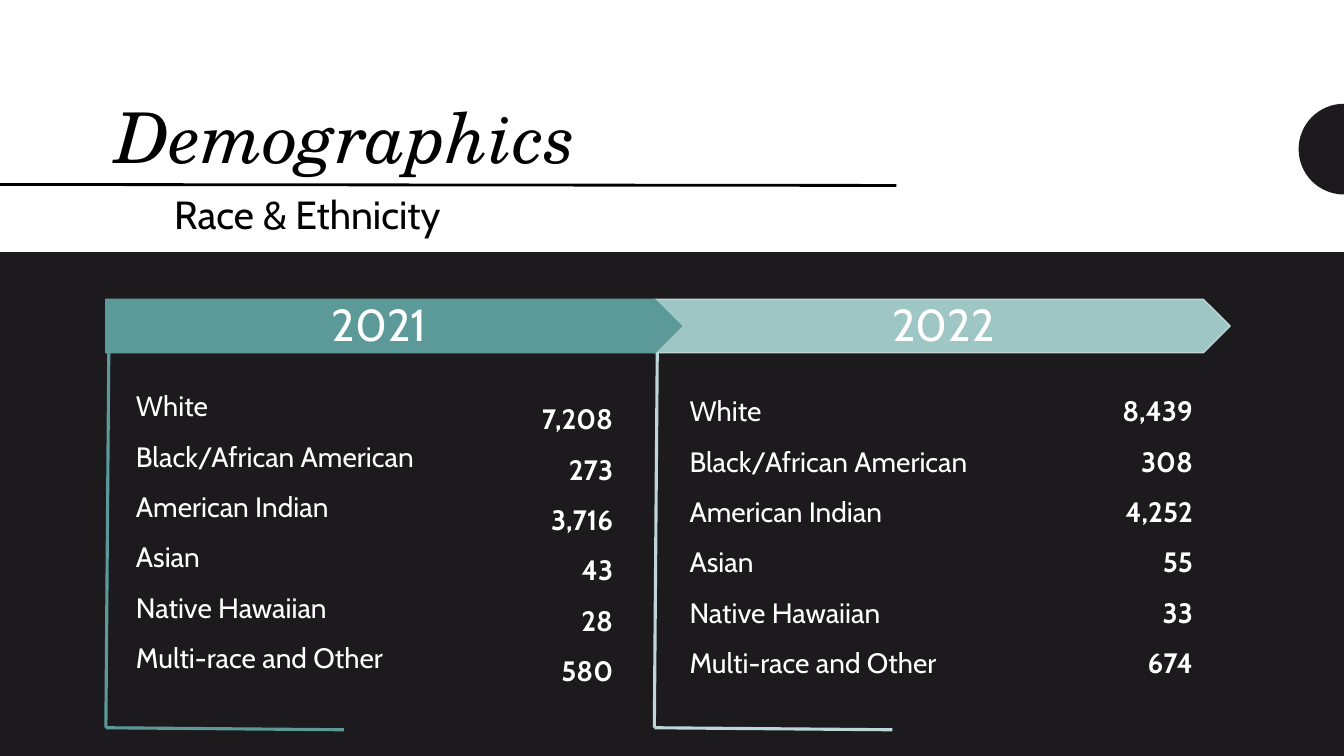
from dataclasses import dataclass
from math import cos, pi, sin

from lxml.etree import SubElement
from pptx import Presentation
from pptx.dml.color import RGBColor as RGB
from pptx.enum.shapes import MSO_CONNECTOR as CONN, MSO_SHAPE as SHAPE
from pptx.enum.text import MSO_ANCHOR as ANCHOR, PP_ALIGN as ALIGN
from pptx.oxml.ns import qn
from pptx.util import Pt

PX = 9144  # 100 px to the inch
WIDTH, HEIGHT = 1333, 750


@dataclass(frozen=True)
class Theme:
    dark: RGB = RGB.from_string("1D1A1D")
    white: RGB = RGB.from_string("FFFFFF")
    black: RGB = RGB.from_string("000000")
    teal: RGB = RGB.from_string("5C9A99")
    mist: RGB = RGB.from_string("9EC6C4")
    pale: RGB = RGB.from_string("BBD7D6")
    serif: str = "TeX Gyre Schola"
    sans: str = "Cabin"
    title: int = 50
    subtitle: int = 28
    year: int = 32
    body: int = 20


@dataclass(frozen=True)
class Panel:
    year: str
    counts: list
    fill: RGB
    line: RGB
    # Text boxes as (left, top, width, height) from the panel's corner
    year_box: tuple
    label_box: tuple
    count_box: tuple


T = Theme()
GROUPS = ["White", "Black/African American", "American Indian", "Asian",
          "Native Hawaiian", "Multi-race and Other"]
PANELS = [
    Panel("2021", ["7,208", "273", "3,716", "43", "28", "580"], T.teal, T.teal,
          (214, -8, 128, 64), (20, 67, 356, 313), (290, 80, 223, 313)),
    Panel("2022", ["8,439", "308", "4,252", "55", "33", "674"], T.mist, T.pale,
          (226, -8, 128, 64), (25, 72, 329, 313), (322, 72, 222, 313)),
]


def emu(*lengths):
    return [n * PX for n in lengths]


def add_text(slide, box, lines, size, color, font=T.sans, bold=False, italic=False,
             align=ALIGN.LEFT, spacing=1.0, anchor=ANCHOR.TOP):
    tf = slide.shapes.add_textbox(*emu(*box)).text_frame
    tf.word_wrap = True
    tf.vertical_anchor = anchor
    for i, line in enumerate(lines):
        p = tf.add_paragraph() if i else tf.paragraphs[0]
        p.text = line
        p.alignment = align
        p.line_spacing = spacing
        p.font.name, p.font.size, p.font.color.rgb = font, Pt(size), color
        p.font.bold, p.font.italic = bold, italic


def add_line(slide, ends, color, weight):
    c = slide.shapes.add_connector(CONN.STRAIGHT, *emu(*ends))
    c.line.color.rgb, c.line.width = color, Pt(weight)
    SubElement(c._element.spPr, qn("a:effectLst"))


def paint(sp, fill, line=None):
    sp.shadow.inherit = False
    sp.fill.solid()
    sp.fill.fore_color.rgb = fill
    if line is None:
        sp.line.fill.background()
    else:
        sp.line.color.rgb, sp.line.width = line, Pt(1)


def add_half_disc(slide, right, middle, radius):
    steps = 32
    angles = [pi * i / steps for i in range(steps + 1)]
    points = [(round((right - radius * sin(a)) * PX),
               round((middle - radius * cos(a)) * PX)) for a in angles]
    builder = slide.shapes.build_freeform(*points[0])
    builder.add_line_segments(points[1:], close=True)
    paint(builder.convert_to_shape(), T.dark)


def add_header(slide, x, y, w, h):
    paint(slide.shapes.add_shape(SHAPE.RECTANGLE, *emu(x, y, w, h)), T.white)
    add_text(slide, (x + 105, y + 47, 992, 135), ["Demographics"], T.title, T.black,
             font=T.serif, italic=True, spacing=0.9, anchor=ANCHOR.BOTTOM)
    add_line(slide, (x, y + 183, x + 889, y + 184), T.black, 2)
    add_half_disc(slide, x + w, y + 148, 45)
    add_text(slide, (x + 163, y + 184, 454, 57), ["Race & Ethnicity"],
             T.subtitle, T.black)


def add_panel(slide, panel, x, y, w, h):
    def inside(box):
        left, top, width, height = box
        return x + left, y + top, width, height

    # Bracket: stem and foot
    add_line(slide, (x + 3, y + 40, x, y + h - 2), panel.line, 2.25)
    add_line(slide, (x + 236, y + h, x, y + h - 2), panel.line, 2.25)
    # Year arrow
    arrow = slide.shapes.add_shape(SHAPE.PENTAGON, *emu(x, y, w, 53))
    paint(arrow, panel.fill, panel.line)
    add_text(slide, inside(panel.year_box), [panel.year], T.year, T.white)
    # Groups and counts
    add_text(slide, inside(panel.label_box), GROUPS, T.body, T.white, spacing=1.5)
    add_text(slide, inside(panel.count_box), panel.counts, T.body, T.white,
             bold=True, align=ALIGN.RIGHT, spacing=1.5)


def main():
    prs = Presentation()
    prs.slide_width, prs.slide_height = emu(WIDTH, HEIGHT)
    slide = prs.slides.add_slide(prs.slide_layouts[6])
    slide.background.fill.solid()
    slide.background.fill.fore_color.rgb = T.dark

    add_header(slide, 0, 0, WIDTH, 250)
    # Right to left, so that each arrow tip lies over the next panel
    for i, panel in reversed(list(enumerate(PANELS))):
        add_panel(slide, panel, 105 + 544 * i, 297, 571, 427)
    prs.save("out.pptx")


if __name__ == "__main__":
    main()
